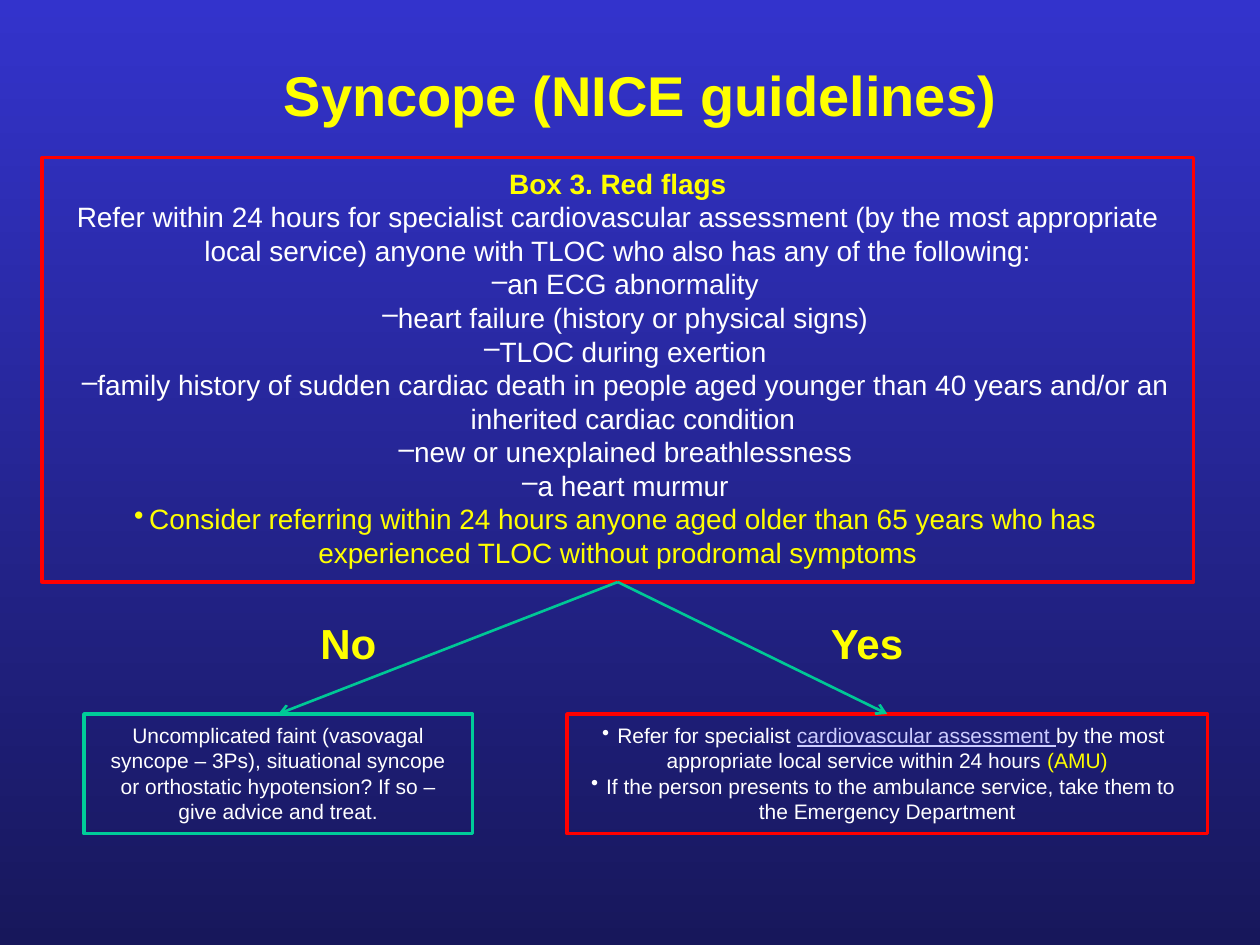
from lxml import etree
from pptx import Presentation
from pptx.dml.color import RGBColor
from pptx.enum import shapes, text
from pptx.oxml import ns
from pptx.util import Pt

YELLOW = RGBColor(0xFF, 0xFF, 0x00)
WHITE = RGBColor(0xFF, 0xFF, 0xFF)
LAVENDER = RGBColor(0xCC, 0xCC, 0xFF)
RED = RGBColor(0xFF, 0x00, 0x00)
GREEN = RGBColor(0x00, 0xCC, 0x99)
ARROW_GREEN = RGBColor(0x00, 0xC8, 0x96)
SKY_TOP = RGBColor(0x33, 0x33, 0xCC)
SKY_BOTTOM = RGBColor(0x17, 0x17, 0x5B)

HANG = Pt(8.64)
FRAME = dict(margin_left=Pt(10), margin_right=Pt(10),
             margin_top=Pt(5), margin_bottom=Pt(5),
             auto_size=text.MSO_AUTO_SIZE.SHAPE_TO_FIT_TEXT,
             vertical_anchor=text.MSO_ANCHOR.TOP)

FLAGS = [
    "an ECG abnormality",
    "heart failure (history or physical signs)",
    "TLOC during exertion",
    "family history of sudden cardiac death in people aged younger than "
    "40 years and/or an inherited cardiac condition",
    "new or unexplained breathlessness",
    "a heart murmur",
]
# Each paragraph is (bullet, left margin, [(wording, run format), ...]).
RED_FLAGS = [
    ("", 0, [("Box 3. Red flags", dict(color=YELLOW, bold=True))]),
    ("", 0, [("Refer within 24 hours for specialist cardiovascular assessment "
              "(by the most appropriate local service) anyone with TLOC who "
              "also has any of the following:", {})]),
    *[("–", 2 * HANG, [(flag, {})]) for flag in FLAGS],
    ("•", 0, [("Consider referring within 24 hours anyone aged older than 65 "
               "years who has experienced TLOC without prodromal symptoms",
               dict(color=YELLOW))]),
]
REFERRAL = [
    ("•", 0, [("Refer for specialist ", {}),
              ("cardiovascular assessment ",
               dict(color=LAVENDER, underline=True)),
              ("by the most appropriate local service within 24 hours ", {}),
              ("(AMU)", dict(color=YELLOW))]),
    ("•", 0, [("If the person presents to the ambulance service, take them "
               "to the Emergency Department", {})]),
]
FAINT = [
    ("", 0, [("Uncomplicated faint (vasovagal syncope – 3Ps), situational "
              "syncope or orthostatic hypotension? If so – give advice and "
              "treat.", {})]),
]


def set_all(target, values):
    for name, value in values.items():
        setattr(target, name, value)


def add_run(paragraph, wording, size, color=WHITE, bold=False, underline=False):
    run = paragraph.add_run()
    run.text = wording
    set_all(run.font, dict(name="Arial", size=Pt(size), bold=bold,
                           underline=underline))
    run.font.color.rgb = color


def add_bullet(paragraph, bullet, margin):
    properties = paragraph._p.get_or_add_pPr()
    properties.set("marL", str(int(margin)))
    properties.set("indent", str(-int(HANG)))
    etree.SubElement(properties, ns.qn("a:buChar")).set("char", bullet)


def write(frame, paragraphs, size):
    for index, (bullet, margin, runs) in enumerate(paragraphs):
        paragraph = frame.add_paragraph() if index else frame.paragraphs[0]
        paragraph.alignment = text.PP_ALIGN.CENTER
        if bullet:
            add_bullet(paragraph, bullet, margin)
        for wording, style in runs:
            add_run(paragraph, wording, size, **style)


def add_box(slide, place, outline, paragraphs, size):
    box = slide.shapes.add_shape(shapes.MSO_SHAPE.RECTANGLE, *map(Pt, place))
    box.shadow.inherit = False
    box.fill.background()
    box.line.color.rgb = outline
    box.line.width = Pt(2)
    set_all(box.text_frame, dict(FRAME, word_wrap=True))
    write(box.text_frame, paragraphs, size)
    return box


def add_label(slide, place, wording):
    label = slide.shapes.add_textbox(*map(Pt, place))
    set_all(label.text_frame, dict(FRAME, word_wrap=False))
    write(label.text_frame,
          [("", 0, [(wording, dict(color=YELLOW, bold=True))])], 24)


def add_arrow(slide, source, target):
    """Join the bottom of source to the top of target."""
    arrow = slide.shapes.add_connector(shapes.MSO_CONNECTOR.STRAIGHT, 0, 0, 0, 0)
    arrow.begin_connect(source, 2)
    arrow.end_connect(target, 0)
    arrow.line.color.rgb = ARROW_GREEN
    arrow.line.width = Pt(1.5)
    line = arrow.line._get_or_add_ln()
    etree.SubElement(line, ns.qn("a:tailEnd")).set("type", "arrow")
    etree.SubElement(arrow._element.spPr, ns.qn("a:effectLst"))


def set_title(slide, wording):
    title = slide.shapes.title
    set_all(title, dict(left=Pt(60), top=Pt(24), width=Pt(612), height=Pt(60)))
    title.text_frame.vertical_anchor = text.MSO_ANCHOR.MIDDLE
    write(title.text_frame,
          [("", 0, [(wording, dict(color=YELLOW, bold=True))])], 32)


def paint_background(slide):
    fill = slide.background.fill
    fill.gradient()
    fill.gradient_angle = 270
    for stop, color in zip(fill.gradient_stops, (SKY_TOP, SKY_BOTTOM)):
        stop.color.rgb = color


def main():
    deck = Presentation()
    set_all(deck, dict(slide_width=Pt(720), slide_height=Pt(540)))
    slide = deck.slides.add_slide(deck.slide_layouts[5])
    paint_background(slide)
    set_title(slide, "Syncope (NICE guidelines)")

    red_flags = add_box(slide, (24, 90, 658, 242.6), RED, RED_FLAGS, 16)
    referral = add_box(slide, (324, 408, 366, 68.4), RED, REFERRAL, 12)
    faint = add_box(slide, (48, 408, 222, 68.4), GREEN, FAINT, 12)
    for outcome in (referral, faint):
        add_arrow(slide, red_flags, outcome)
    add_label(slide, (464.4, 348, 62, 39.6), "Yes")
    add_label(slide, (172.8, 348, 52.6, 39.6), "No")
    deck.save("out.pptx")


if __name__ == "__main__":
    main()
